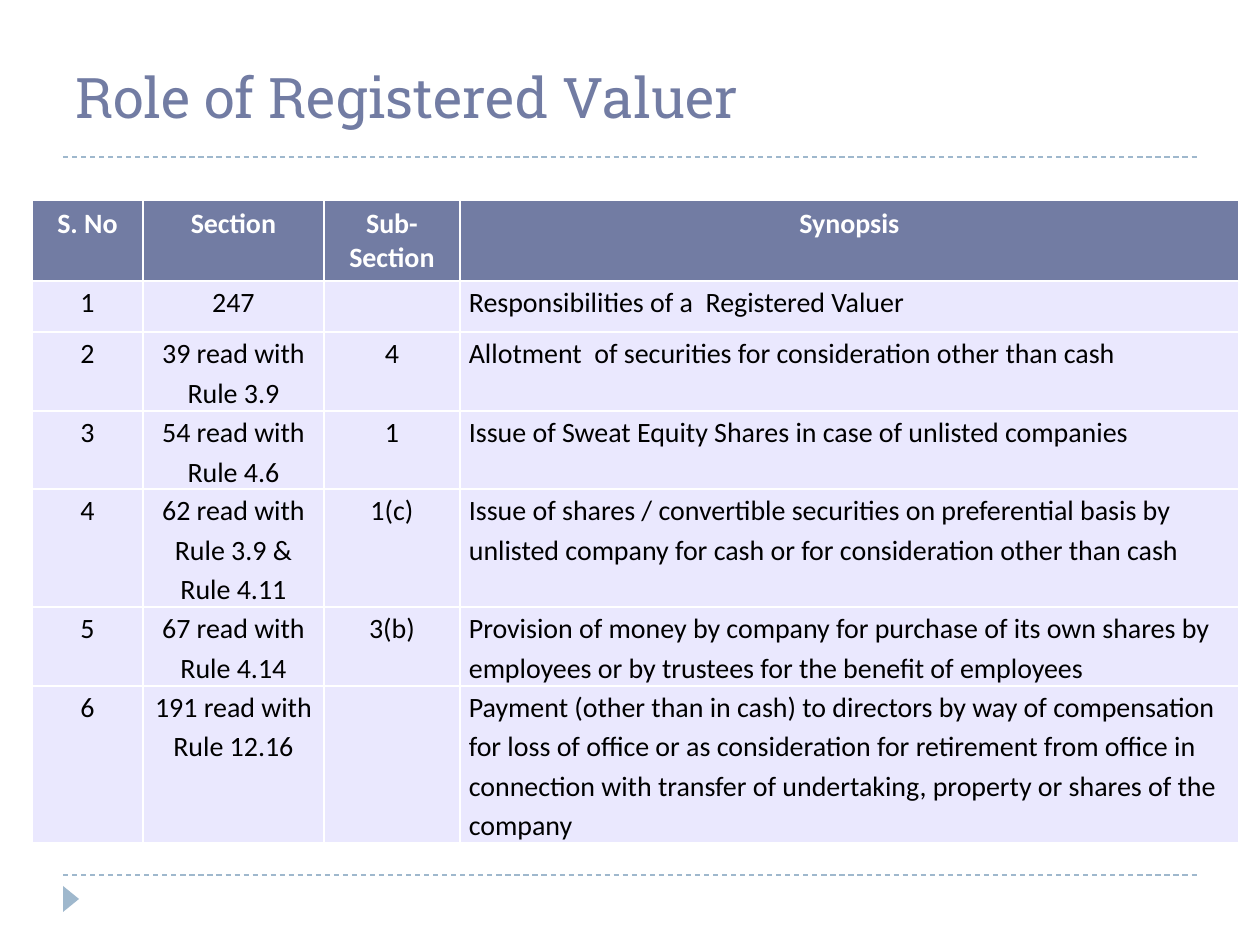
import pptx
import pptx.util
import pptx.dml.color
import pptx.enum.dml
import pptx.enum.shapes
import pptx.enum.text
import pptx.oxml
import pptx.oxml.ns
from dataclasses import dataclass

TITLE = "Role of Registered Valuer"
HEADER = ("S. No", "Section", "Sub- Section", "Synopsis")
ROWS = [
    ("247", "", "Responsibilities of a  Registered Valuer"),
    ("39 read with Rule 3.9", "4", "Allotment  of securities for consideration other than cash"),
    ("54 read with Rule 4.6", "1", "Issue of Sweat Equity Shares in case of unlisted companies"),
    ("62 read with Rule 3.9 & Rule 4.11", "1(c)",
     "Issue of shares / convertible securities on preferential basis by unlisted company "
     "for cash or for consideration other than cash"),
    ("67 read with Rule 4.14", "3(b)",
     "Provision of money by company for purchase of its own shares by employees "
     "or by trustees for the benefit of employees"),
    ("191 read with Rule 12.16", "",
     "Payment (other than in cash) to directors by way of compensation for loss of office "
     "or as consideration for retirement from office in connection with transfer of "
     "undertaking, property or shares of the company"),
]
COL_WIDTHS = (111, 181, 136, 779)
ROW_HEIGHTS = (81, 51, 79, 78, 118, 79, 157)
TABLE_AT = (32, 200)
TITLE_BOX = (63, 0, 1134, 136)
MARKER_BOX = (58, 891, 26, 16)
RULES_Y = (875, 157)
RULE_X = (63, 1197)


@dataclass
class Theme:
    primary: str = "727CA3"
    accent: str = "9FB8CD"
    band: str = "EAE8FE"
    white: str = "FFFFFF"
    black: str = "000000"
    title_font: str = "Roboto Slab"
    body_font: str = "Calibri"
    title_size: int = 32
    body_size: int = 16


theme = Theme()
ALIGN = pptx.enum.text.PP_ALIGN
ANCHOR = pptx.enum.text.MSO_ANCHOR


def px(n):
    return pptx.util.Emu(round(n * 914400 / 126))


def rgb(value):
    return pptx.dml.color.RGBColor.from_string(value)


def apply(target, **values):
    for name, value in values.items():
        setattr(target, name, value)


def fill(target, color):
    target.fill.solid()
    target.fill.fore_color.rgb = rgb(color)


def write(tf, text, color, font, paragraph):
    p = tf.paragraphs[0]
    apply(p, **paragraph)
    if text:
        r = p.add_run()
        r.text = text
        apply(r.font, **font)
        r.font.color.rgb = rgb(color)
    else:
        apply(p.font, **font)


def add_borders(cell):
    tc_pr = cell._tc.get_or_add_tcPr()
    for side in "LRTB":
        tc_pr.append(pptx.oxml.parse_xml(
            f'<a:ln{side} {pptx.oxml.ns.nsdecls("a")} w="12700"><a:solidFill>'
            f'<a:srgbClr val="{theme.white}"/></a:solidFill></a:ln{side}>'))


def add_rule(s, y):
    sp = s.shapes.add_connector(pptx.enum.shapes.MSO_CONNECTOR.STRAIGHT,
                                px(RULE_X[0]), px(y), px(RULE_X[1]), px(y))
    apply(sp.line, width=pptx.util.Pt(0.75), dash_style=pptx.enum.dml.MSO_LINE.DASH)
    sp.line.color.rgb = rgb(theme.accent)
    sp._element.spPr.append(pptx.oxml.parse_xml(f'<a:effectLst {pptx.oxml.ns.nsdecls("a")}/>'))


def add_marker(s):
    sp = s.shapes.add_shape(pptx.enum.shapes.MSO_SHAPE.ISOSCELES_TRIANGLE, *map(px, MARKER_BOX))
    sp.rotation = 90
    sp.shadow.inherit = False
    fill(sp, theme.accent)
    sp.line.fill.background()


def add_title(s):
    tf = s.shapes.add_textbox(*map(px, TITLE_BOX)).text_frame
    apply(tf, word_wrap=True, vertical_anchor=ANCHOR.BOTTOM)
    write(tf, TITLE, theme.primary,
          dict(name=theme.title_font, size=pptx.util.Pt(theme.title_size)),
          dict(alignment=ALIGN.LEFT))


def add_synopsis_table(s):
    data = [HEADER] + [(str(n), *row) for n, row in enumerate(ROWS, 1)]
    size = (sum(COL_WIDTHS), sum(ROW_HEIGHTS))
    table = s.shapes.add_table(len(data), len(HEADER), *map(px, TABLE_AT + size)).table
    for column, width in zip(table.columns, COL_WIDTHS):
        column.width = px(width)
    for row, height in zip(table.rows, ROW_HEIGHTS):
        row.height = px(height)
    for i, texts in enumerate(data):
        head = i == 0
        for j, text in enumerate(texts):
            cell = table.cell(i, j)
            add_borders(cell)
            fill(cell, theme.primary if head else theme.band)
            if not head:
                apply(cell, margin_left=px(9), margin_right=px(9), margin_top=0, margin_bottom=0)
            centred = head or j < len(HEADER) - 1
            write(cell.text_frame, text, theme.white if head else theme.black,
                  dict(name=theme.body_font, size=pptx.util.Pt(theme.body_size), bold=head),
                  dict(alignment=ALIGN.CENTER if centred else ALIGN.LEFT,
                       line_spacing=1.0 if head else 1.15))


prs = pptx.Presentation()
apply(prs, slide_width=px(1260), slide_height=px(945))
s = prs.slides.add_slide(prs.slide_layouts[6])
for y in RULES_Y:
    add_rule(s, y)
add_marker(s)
add_title(s)
add_synopsis_table(s)
prs.save("out.pptx")
